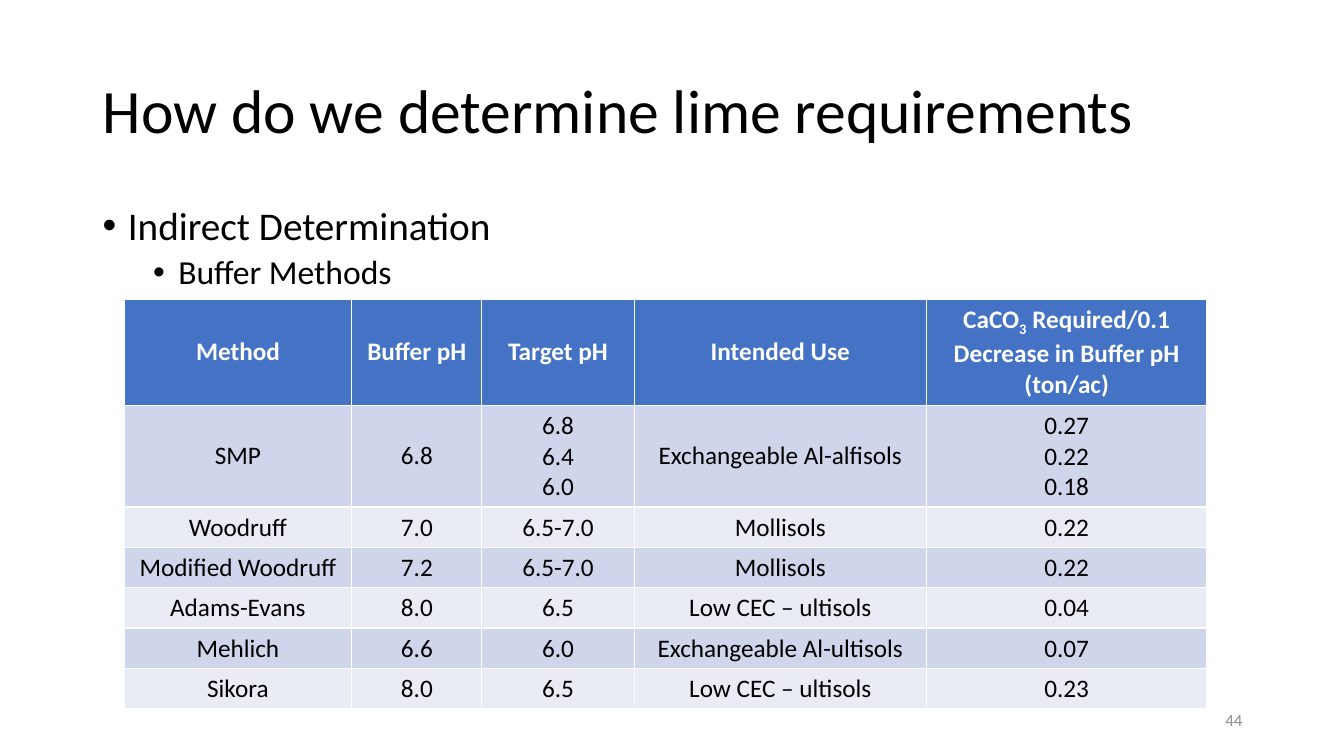
import pptx
import pptx.util
import pptx.dml.color
import pptx.enum.text
import pptx.oxml.ns
import lxml.etree

Inches = pptx.util.Inches
Pt = pptx.util.Pt
RGB = pptx.dml.color.RGBColor
ALIGN = pptx.enum.text.PP_ALIGN
ANCHOR = pptx.enum.text.MSO_ANCHOR

FONT = "Calibri"
BLACK = RGB(0x00, 0x00, 0x00)
WHITE = RGB(0xFF, 0xFF, 0xFF)
GRAY = RGB(0x8C, 0x8C, 0x8C)
BLUE = RGB(0x44, 0x72, 0xC4)
BANDS = RGB(0xCF, 0xD5, 0xEA), RGB(0xE9, 0xEB, 0xF5)

COLS = 2.26, 1.29, 1.51, 2.9, 2.78
ROWS = 1.05, 1.01, 0.4, 0.4, 0.4, 0.4, 0.4
# A line break parts paragraphs; a bar sets off a subscript.
DATA = [
    ("Method", "Buffer pH", "Target pH", "Intended Use",
     "CaCO|3| Required/0.1 Decrease in Buffer pH\n(ton/ac)"),
    ("SMP", "6.8", "6.8\n6.4\n6.0", "Exchangeable Al-alfisols",
     "0.27\n0.22\n0.18"),
    ("Woodruff", "7.0", "6.5-7.0", "Mollisols", "0.22"),
    ("Modified Woodruff", "7.2", "6.5-7.0", "Mollisols", "0.22"),
    ("Adams-Evans", "8.0", "6.5", "Low CEC – ultisols", "0.04"),
    ("Mehlich", "6.6", "6.0", "Exchangeable Al-ultisols", "0.07"),
    ("Sikora", "8.0", "6.5", "Low CEC – ultisols", "0.23"),
]


def style(para, size, color, bold=False):
    font = para.font
    font.name, font.size, font.bold = FONT, Pt(size), bold
    font.color.rgb = color


def add_box(slide, box, anchor):
    frame = slide.shapes.add_textbox(*map(Inches, box)).text_frame
    frame.word_wrap = True
    frame.vertical_anchor = anchor
    return frame


def add_line(slide, box, text, size, color, align):
    """Add one line of text, centred upright in its box."""
    para = add_box(slide, box, ANCHOR.MIDDLE).paragraphs[0]
    para.text = text
    para.alignment = align
    para.line_spacing = 0.9
    style(para, size, color)


def add_list(slide, box, items):
    """Add bullets, each given as text, size and left margin."""
    frame = add_box(slide, box, ANCHOR.TOP)
    for i, (text, size, left) in enumerate(items):
        para = frame.add_paragraph() if i else frame.paragraphs[0]
        para.text = text
        para.level = i
        para.line_spacing = 0.9
        para.space_before = Pt(5 if i else 0)
        props = para._p.get_or_add_pPr()
        props.set("marL", str(Inches(left)))
        props.set("indent", str(Inches(-0.25)))
        for tag, key, value in (("a:buFont", "typeface", "Arial"),
                                ("a:buChar", "char", "•")):
            lxml.etree.SubElement(
                props, pptx.oxml.ns.qn(tag)).set(key, value)
        style(para, size, BLACK)


def fill_cell(cell, text, fill, color, bold):
    cell.fill.solid()
    cell.fill.fore_color.rgb = fill
    cell.vertical_anchor = ANCHOR.MIDDLE
    frame = cell.text_frame
    for i, line in enumerate(text.split("\n")):
        para = frame.add_paragraph() if i else frame.paragraphs[0]
        para.alignment = ALIGN.CENTER
        for j, part in enumerate(line.split("|")):
            run = para.add_run()
            run.text = part
            if j % 2:
                run._r.get_or_add_rPr().set("baseline", "-25000")
        style(para, 18, color, bold)


def add_grid(slide, left, top):
    """Add the table of buffer methods."""
    size = left, top, sum(COLS), sum(ROWS)
    table = slide.shapes.add_table(
        len(ROWS), len(COLS), *map(Inches, size)).table
    for col, width in zip(table.columns, COLS):
        col.width = Inches(width)
    for i, (row, height) in enumerate(zip(table.rows, ROWS)):
        row.height = Inches(height)
        look = (BANDS[(i - 1) % 2], BLACK, False) if i else (BLUE, WHITE, True)
        for cell, text in zip(row.cells, DATA[i]):
            fill_cell(cell, text, *look)


def main():
    deck = pptx.Presentation()
    deck.slide_width, deck.slide_height = Inches(13.33), Inches(7.5)
    slide = deck.slides.add_slide(deck.slide_layouts[6])
    add_line(slide, (0.92, 0.4, 11.5, 1.45),
             "How do we determine lime requirements", 44, BLACK, ALIGN.LEFT)
    add_list(slide, (0.92, 2, 11.5, 4.76),
             [("Indirect Determination", 28, 0.25),
              ("Buffer Methods", 24, 0.75)])
    add_grid(slide, 1.23, 2.97)
    add_line(slide, (9.42, 6.95, 3, 0.4), "44", 12, GRAY, ALIGN.RIGHT)
    deck.save("out.pptx")


if __name__ == "__main__":
    main()
